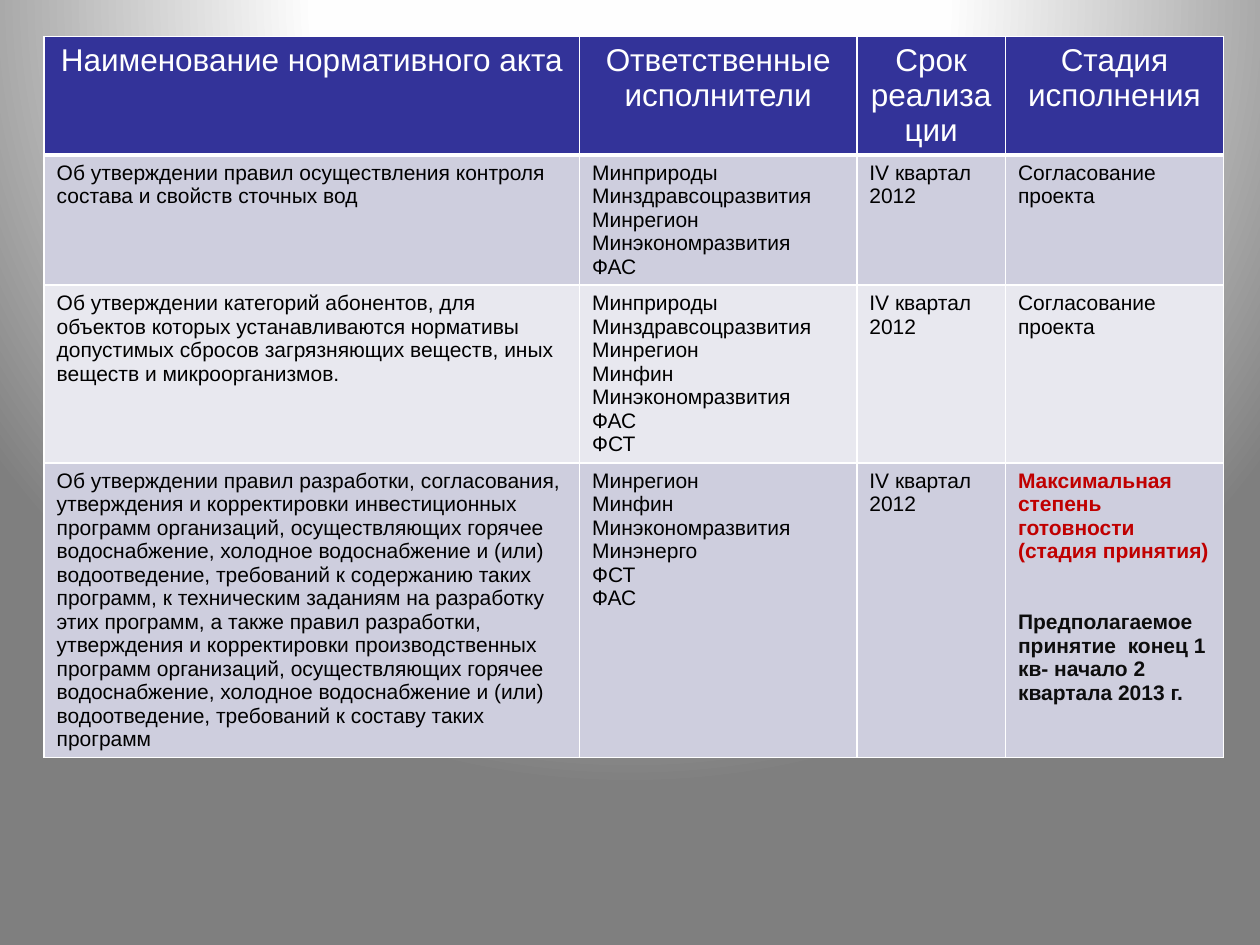
from pptx import Presentation
from pptx.dml.color import RGBColor
from pptx.enum.text import PP_ALIGN
from pptx.oxml import parse_xml
from pptx.oxml.ns import nsdecls, qn
from pptx.util import Inches, Pt

THEME = {
    "font": "Arial",
    "header_size": 18, "body_size": 12, "section_gap": 27,
    "header_fill": "333399", "row_fills": ("CECEDE", "E8E8EF"),
    "header_text": "FFFFFF", "body_text": "000000",
    "alert": "C00000", "forecast": "0D0D0D",
    "border": "FFFFFF", "border_width": 1, "header_rule": 3,
    "background": ((0, "FFFFFF"), (40, "FEFEFE"), (100, "7F7F7F")),
}

HEADERS = ["Наименование нормативного акта", "Ответственные исполнители",
           "Срок реализации", "Стадия исполнения"]
DEADLINE = ["IV квартал 2012"]
APPROVAL = ["Согласование", "проекта"]
ACTS = [
    (["Об утверждении правил осуществления контроля состава и свойств сточных вод"],
     ["Минприроды", "Минздравсоцразвития", "Минрегион", "Минэкономразвития", "ФАС"],
     DEADLINE, APPROVAL),
    (["Об утверждении категорий абонентов, для объектов которых устанавливаются "
      "нормативы допустимых сбросов загрязняющих веществ, иных веществ и "
      "микроорганизмов."],
     ["Минприроды", "Минздравсоцразвития", "Минрегион", "Минфин",
      "Минэкономразвития", "ФАС", "ФСТ"],
     DEADLINE, APPROVAL),
    (["Об утверждении правил разработки, согласования, утверждения и корректировки "
      "инвестиционных программ организаций, осуществляющих горячее водоснабжение, "
      "холодное водоснабжение и (или) водоотведение, требований к содержанию таких "
      "программ, к техническим заданиям на разработку этих программ, а также правил "
      "разработки, утверждения и корректировки производственных программ организаций, "
      "осуществляющих горячее водоснабжение, холодное водоснабжение и (или) "
      "водоотведение, требований к составу таких программ"],
     ["Минрегион", "Минфин", "Минэкономразвития", "Минэнерго", "ФСТ", "ФАС"],
     DEADLINE,
     ["Максимальная степень готовности (стадия принятия)",
      "Предполагаемое принятие  конец 1 кв- начало 2 квартала 2013 г."]),
]
TABLE_LEFT, TABLE_TOP = 0.35, 0.29
COLUMN_WIDTHS = [4.25, 2.2, 1.18, 1.73]
ROW_HEIGHTS = [0.93, 1.03, 1.41, 2.34]


def paint_background(page):
    """Fill the page with a radial gradient centred above its top edge."""
    page.background.fill.solid()
    stops = "".join(
        f'<a:gs pos="{place * 1000}"><a:srgbClr val="{color}"/></a:gs>'
        for place, color in THEME["background"])
    gradient = parse_xml(
        f'<a:gradFill {nsdecls("a")} rotWithShape="1"><a:gsLst>{stops}</a:gsLst>'
        '<a:path path="circle">'
        '<a:fillToRect l="50000" t="-80000" r="50000" b="180000"/>'
        '</a:path></a:gradFill>')
    properties = page.element.find(".//" + qn("p:bgPr"))
    properties.replace(properties[0], gradient)


def set_borders(cell, bottom_width):
    properties = cell._tc.get_or_add_tcPr()
    normal = THEME["border_width"]
    widths = {"lnL": normal, "lnR": normal, "lnT": normal, "lnB": bottom_width}
    for index, (side, width) in enumerate(widths.items()):
        properties.insert(index, parse_xml(
            f'<a:{side} {nsdecls("a")} w="{Pt(width)}"><a:solidFill>'
            f'<a:srgbClr val="{THEME["border"]}"/></a:solidFill></a:{side}>'))


def fill_cell(cell, lines, fill, size, color, align, bottom_width):
    cell.fill.solid()
    cell.fill.fore_color.rgb = RGBColor.from_string(fill)
    set_borders(cell, bottom_width)
    cell.text = "\n".join(lines)
    for paragraph in cell.text_frame.paragraphs:
        paragraph.alignment = align
        style_font(paragraph, size, color, False)


def style_font(paragraph, size, color, bold):
    font = paragraph.font
    font.name, font.size, font.bold = THEME["font"], Pt(size), bold
    font.color.rgb = RGBColor.from_string(color)
    # Runs carry the weight and colour because the table style sets its own.
    for span in paragraph.runs:
        span.font.bold = bold
        span.font.color.rgb = RGBColor.from_string(color)


def add_acts_table(page):
    frame = page.shapes.add_table(
        len(ROW_HEIGHTS), len(COLUMN_WIDTHS), Inches(TABLE_LEFT), Inches(TABLE_TOP),
        Inches(sum(COLUMN_WIDTHS)), Inches(sum(ROW_HEIGHTS)))
    table = frame.table
    for column, width in zip(table.columns, COLUMN_WIDTHS):
        column.width = Inches(width)
    for row, height in zip(table.rows, ROW_HEIGHTS):
        row.height = Inches(height)

    for index, title in enumerate(HEADERS):
        fill_cell(table.cell(0, index), [title], THEME["header_fill"],
                  THEME["header_size"], THEME["header_text"], PP_ALIGN.CENTER,
                  THEME["header_rule"])
    for row_index, act in enumerate(ACTS, start=1):
        fill = THEME["row_fills"][(row_index - 1) % 2]
        for column_index, lines in enumerate(act):
            fill_cell(table.cell(row_index, column_index), lines, fill,
                      THEME["body_size"], THEME["body_text"], PP_ALIGN.LEFT,
                      THEME["border_width"])

    status, forecast = table.cell(len(ACTS), 3).text_frame.paragraphs
    style_font(status, THEME["body_size"], THEME["alert"], True)
    style_font(forecast, THEME["body_size"], THEME["forecast"], True)
    forecast.space_before = Pt(THEME["section_gap"])


def main():
    deck = Presentation()
    deck.slide_width, deck.slide_height = Inches(10), Inches(7.5)
    page = deck.slides.add_slide(deck.slide_layouts[6])
    paint_background(page)
    add_acts_table(page)
    deck.save("out.pptx")


if __name__ == "__main__":
    main()
